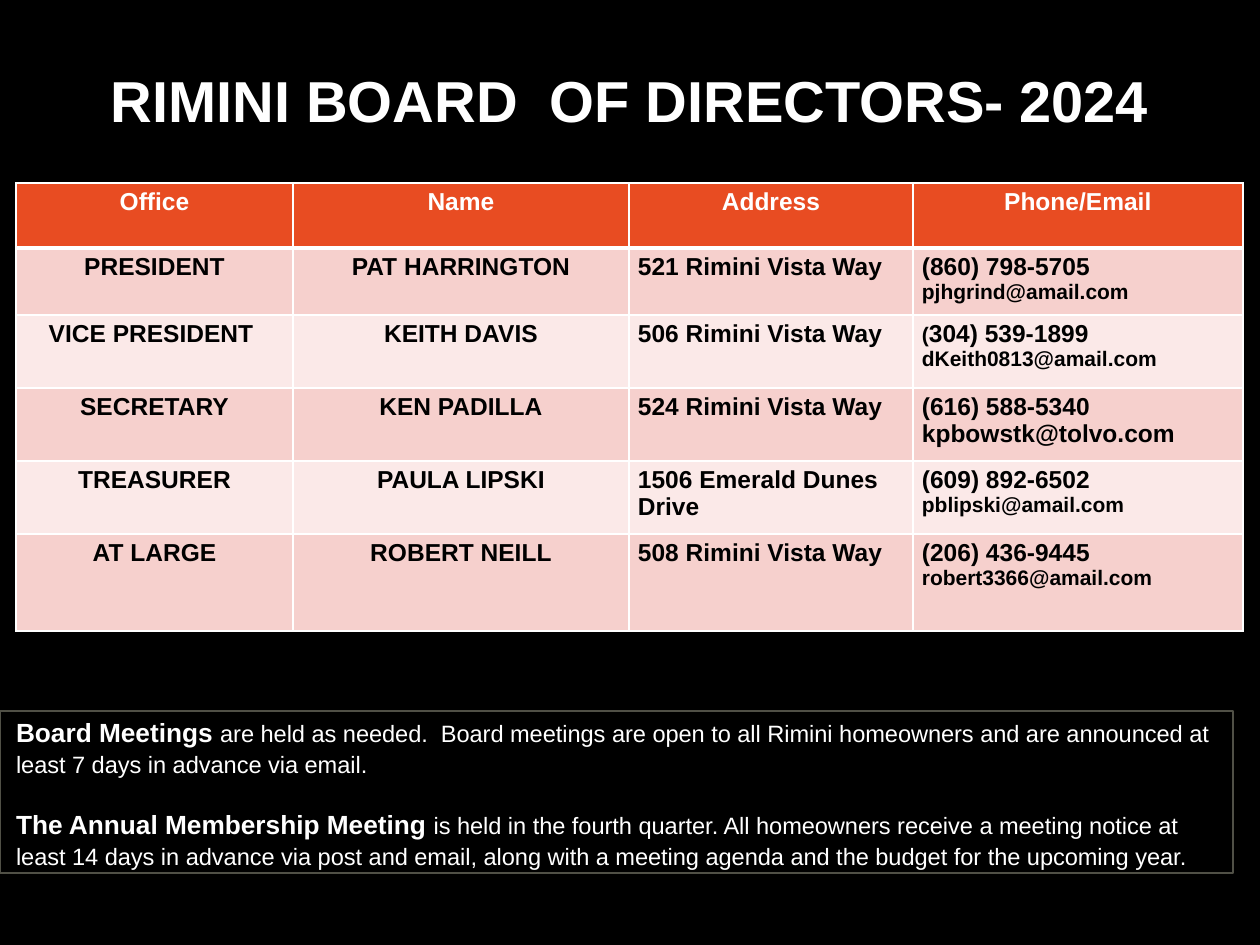
"""Build the board of directors slide with its contact table and meeting notes."""
from lxml.etree import SubElement
from pptx import Presentation
from pptx.dml.color import RGBColor
from pptx.enum.shapes import MSO_SHAPE
from pptx.enum.text import MSO_ANCHOR, PP_ALIGN
from pptx.oxml.ns import qn
from pptx.util import Emu, Pt

PX = 7257.6
WHITE, BLACK, ORANGE = "FFFFFF", "000000", "E84C22"
BANDS = ["F6D0CD", "FBE9E8"]

TITLE = "RIMINI BOARD  OF DIRECTORS- 2024"
HEADERS = ["Office", "Name", "Address", "Phone/Email"]
MEMBERS = [
    ("PRESIDENT", "PAT HARRINGTON", ["521 Rimini Vista Way"],
     [("(860) 798-5705", 14)], ("pjhgrind@amail.com", 12)),
    ("VICE PRESIDENT ", "KEITH DAVIS", ["506 Rimini Vista Way"],
     [("(", 12), ("304) 539-1899", 14)], ("dKeith0813@amail.com", 12)),
    ("SECRETARY", "KEN PADILLA", ["524 Rimini Vista Way"],
     [("(616) 588-5340", 14)], ("kpbowstk@tolvo.com", 14)),
    ("TREASURER", "PAULA LIPSKI", ["1506 Emerald Dunes", "Drive"],
     [("(609) 892-6502", 14)], ("pblipski@amail.com", 12)),
    ("AT LARGE", "ROBERT NEILL", ["508 Rimini Vista Way"],
     [("(206) 436-9445", 14)], ("robert3366@amail.com", 12)),
]
NOTES = [
    ("Board Meetings ",
     "are held as needed.  Board meetings are open to all Rimini homeowners and "
     "are announced at least 7 days in advance via email."),
    ("The Annual Membership Meeting ",
     "is held in the fourth quarter. All homeowners receive a meeting notice at "
     "least 14 days in advance via post and email, along with a meeting agenda "
     "and the budget for the upcoming year."),
]
COLUMNS = [277, 336, 284, 330]
ROWS = [65, 67, 73, 73, 73, 97]


def px(*lengths):
    return [Emu(round(length * PX)) for length in lengths]


def rgb(color):
    return RGBColor.from_string(color)


def write(frame, paragraphs, color=WHITE, align=PP_ALIGN.LEFT, gap=0, spacing=None):
    """Fill a text frame with paragraphs of (text, size, bold) spans."""
    frame.word_wrap = True
    for index, spans in enumerate(paragraphs):
        para = frame.add_paragraph() if index else frame.paragraphs[0]
        para.alignment = align
        para.line_spacing = spacing
        if index and gap:
            para.space_before = Pt(gap)
        for text, size, bold in spans:
            span = para.add_run()
            span.text = text
            span.font.name = "Arial"
            span.font.size = Pt(size)
            span.font.bold = bold
            span.font.color.rgb = rgb(color)


def add_borders(cell, **widths):
    properties = cell._tc.get_or_add_tcPr()
    for side in "LRTB":
        line = SubElement(properties, qn(f"a:ln{side}"), w=str(Pt(widths.get(side, 1))))
        fill = SubElement(line, qn("a:solidFill"))
        SubElement(fill, qn("a:srgbClr"), val=WHITE)


def add_directory(page):
    frame = page.shapes.add_table(
        len(ROWS), len(COLUMNS), *px(16, 183, sum(COLUMNS), sum(ROWS)))
    table = frame.table
    for column, width in zip(table.columns, px(*COLUMNS)):
        column.width = width
    for row, height in zip(table.rows, px(*ROWS)):
        row.height = height

    grid = [[[[(header, 14, True)]] for header in HEADERS]]
    for office, name, address, phone, email in MEMBERS:
        lines = [[(office, 14)]], [[(name, 14)]], [[(line, 14)] for line in address], [phone, [email]]
        grid.append([[[(*span, True) for span in line] for line in cell] for cell in lines])

    for r, contents in enumerate(grid):
        for c, paragraphs in enumerate(contents):
            cell = table.cell(r, c)
            cell.margin_left, cell.margin_right, cell.margin_top, cell.margin_bottom = px(9, 9, 5, 5)
            add_borders(cell, T=3 if r == 1 else 1, B=1 if r else 3)
            cell.fill.solid()
            cell.fill.fore_color.rgb = rgb(BANDS[(r - 1) % 2] if r else ORANGE)
            write(cell.text_frame, paragraphs, color=BLACK if r else WHITE,
                  align=PP_ALIGN.CENTER if r == 0 or c < 2 else PP_ALIGN.LEFT)


def add_notes(page):
    box = page.shapes.add_shape(MSO_SHAPE.RECTANGLE, *px(0, 711, 1233, 162))
    box.shadow.inherit = False
    box.fill.background()
    box.line.color.rgb = rgb("505046")
    box.line.width = Pt(0.75)
    frame = box.text_frame
    frame.vertical_anchor = MSO_ANCHOR.MIDDLE
    frame.margin_left, frame.margin_right = px(16, 12)
    write(frame, [[(lead, 15, True), (rest, 13.5, False)] for lead, rest in NOTES],
          gap=16, spacing=1.07)


def main():
    deck = Presentation()
    deck.slide_width, deck.slide_height = px(1260, 945)
    page = deck.slides.add_slide(deck.slide_layouts[6])
    page.background.fill.solid()
    page.background.fill.fore_color.rgb = rgb(BLACK)

    add_directory(page)
    title = page.shapes.add_textbox(*px(87, 34, 1086, 130)).text_frame
    title.vertical_anchor = MSO_ANCHOR.MIDDLE
    write(title, [[(TITLE, 33, True)]], align=PP_ALIGN.CENTER)
    add_notes(page)
    deck.save("out.pptx")


if __name__ == "__main__":
    main()
